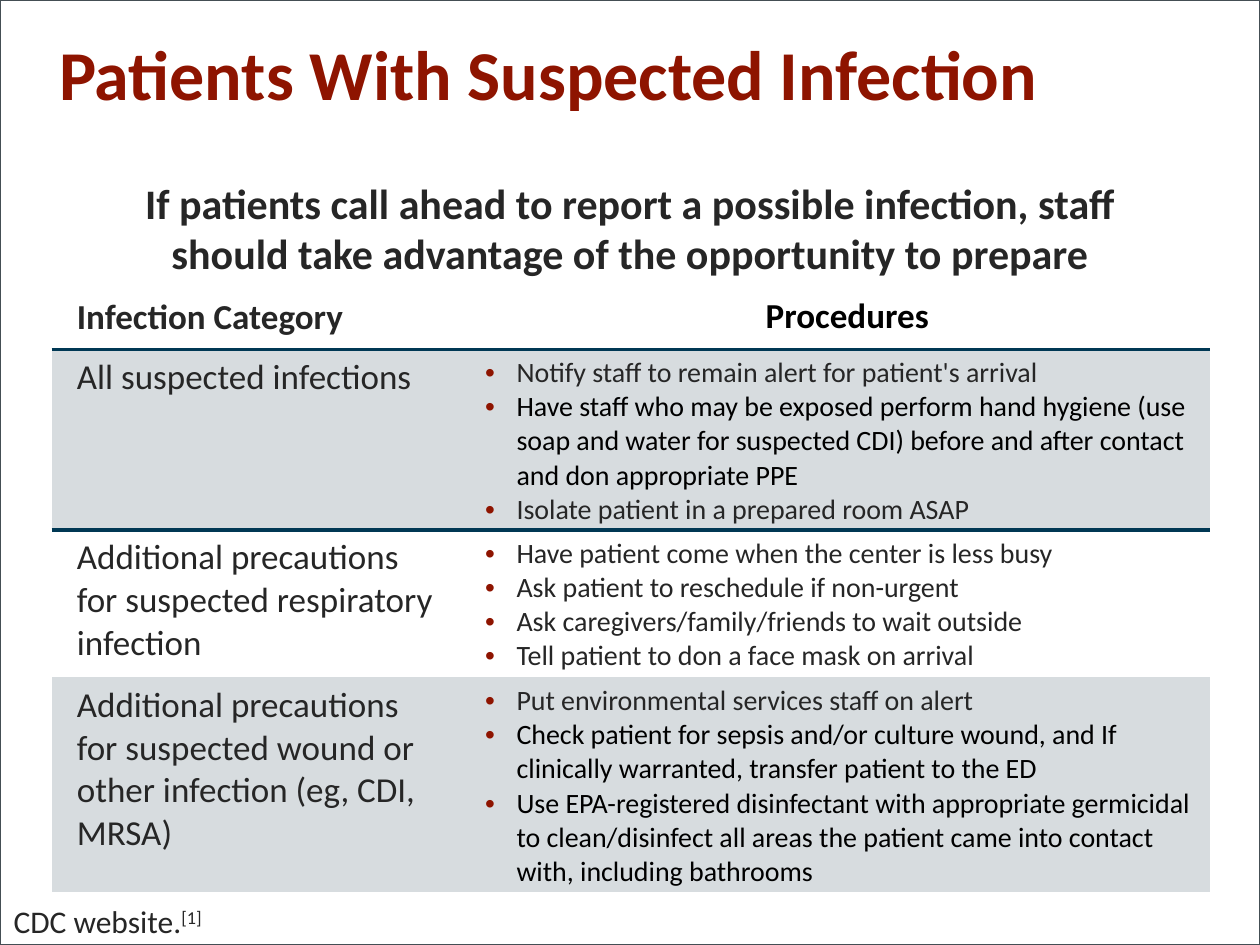
from dataclasses import dataclass

from lxml import etree
from pptx import Presentation
from pptx import util as u
from pptx.dml.color import RGBColor
from pptx.enum import shapes, text
from pptx.oxml import ns

COLUMNS, ROWS = 1000, 750
UNIT = u.Inches(0.01)  # side of one grid square
PLAIN_TABLE = "{2D5ABB26-0587-4C30-8999-92F81FD0307C}"


@dataclass(frozen=True)
class Theme:
    font: str = "Calibri"
    accent: str = "8E1400"
    body: str = "262626"
    strong: str = "000000"
    band: str = "D7DCDF"
    rule: str = "003854"
    frame: str = "444E54"
    title_size: int = 40
    lead_size: int = 24
    category_size: int = 20
    procedure_size: int = 16
    source_size: int = 18


THEME = Theme()

# Category lines, procedures as (wording, colour), row height in grid rows
PRECAUTIONS = [
    (["All suspected infections"],
     [("Notify staff to remain alert for patient's arrival", THEME.body),
      ("Have staff who may be exposed perform hand hygiene (use soap and water "
       "for suspected CDI) before and after contact and don appropriate PPE", THEME.strong),
      ("Isolate patient in a prepared room ASAP", THEME.body)], 143),
    (["Additional precautions", "for suspected respiratory infection"],
     [("Have patient come when the center is less busy", THEME.body),
      ("Ask patient to reschedule if non-urgent", THEME.body),
      ("Ask caregivers/family/friends to wait outside", THEME.body),
      ("Tell patient to don a face mask on arrival", THEME.body)], 117),
    (["Additional precautions", "for suspected wound or other infection (eg, CDI, MRSA)"],
     [("Put environmental services staff on alert", THEME.body),
      ("Check patient for sepsis and/or culture wound, and If clinically warranted, "
       "transfer patient to the ED", THEME.strong),
      ("Use EPA-registered disinfectant with appropriate germicidal to clean/disinfect "
       "all areas the patient came into contact with, including bathrooms", THEME.strong)], 170),
]


def place(box):
    """Turn a box in grid squares into slide lengths."""
    return [side * UNIT for side in box]


def rgb(colour):
    return RGBColor.from_string(colour)


def add_xml(parent, tag, **attributes):
    return etree.SubElement(parent, ns.qn(tag), attributes)


def add_run(paragraph, wording, size, colour=THEME.body, bold=False):
    run = paragraph.add_run()
    run.text = wording
    run.font.size = u.Pt(size)
    run.font.bold = bold
    run.font.color.rgb = rgb(colour)
    run.font.name = THEME.font
    return run


def add_text_area(slide, box, anchor=text.MSO_ANCHOR.TOP):
    """Add a wrapping text box and return its first paragraph."""
    frame = slide.shapes.add_textbox(*place(box)).text_frame
    frame.word_wrap = True
    frame.vertical_anchor = anchor
    return frame.paragraphs[0]


def add_frame(slide, box):
    border = slide.shapes.add_shape(shapes.MSO_SHAPE.RECTANGLE, *place(box))
    border.shadow.inherit = False
    border.fill.background()
    border.line.color.rgb = rgb(THEME.frame)
    border.line.width = u.Pt(1.5)


def add_title(slide, box):
    paragraph = add_text_area(slide, box, text.MSO_ANCHOR.MIDDLE)
    add_run(paragraph, "Patients With Suspected Infection",
            THEME.title_size, THEME.accent, bold=True)


def add_lead(slide, box):
    paragraph = add_text_area(slide, box)
    paragraph.alignment = text.PP_ALIGN.CENTER
    add_run(paragraph, "If patients call ahead to report a possible infection, staff "
            "should take advantage of the opportunity to prepare",
            THEME.lead_size, bold=True)


def add_source(slide, box):
    paragraph = add_text_area(slide, box)
    add_run(paragraph, "CDC website.", THEME.source_size)
    citation = add_run(paragraph, "[1]", THEME.source_size)
    citation.font._element.set("baseline", "30000")


def add_bullet(paragraph):
    properties = paragraph._p.get_or_add_pPr()
    properties.set("marL", str(u.Inches(0.25)))
    properties.set("indent", str(-u.Inches(0.25)))
    add_xml(add_xml(properties, "a:buClr"), "a:srgbClr", val=THEME.accent)
    add_xml(properties, "a:buFont", typeface="Arial")
    add_xml(properties, "a:buChar", char="•")


def add_rule(cell, edge):
    properties = cell._tc.get_or_add_tcPr()
    line = etree.Element(ns.qn(edge), w=str(u.Pt(2.25)))
    add_xml(add_xml(line, "a:solidFill"), "a:srgbClr", val=THEME.rule)
    properties.insert(0, line)


def fill_heading(cell, wording, colour):
    cell.vertical_anchor = text.MSO_ANCHOR.BOTTOM
    cell.margin_left, cell.margin_bottom = u.Inches(0.2), u.Inches(0.1)
    paragraph = cell.text_frame.paragraphs[0]
    add_run(paragraph, wording, THEME.category_size, colour, bold=True)
    add_rule(cell, "a:lnB")
    return paragraph


def fill_category(cell, lines):
    cell.margin_left, cell.margin_bottom = u.Inches(0.2), 0
    paragraph = cell.text_frame.paragraphs[0]
    for number, line in enumerate(lines):
        if number:
            paragraph.add_line_break()
        add_run(paragraph, line, THEME.category_size)


def fill_procedures(cell, procedures):
    cell.vertical_anchor = text.MSO_ANCHOR.MIDDLE
    frame = cell.text_frame
    for number, (wording, colour) in enumerate(procedures):
        paragraph = frame.add_paragraph() if number else frame.paragraphs[0]
        add_bullet(paragraph)
        add_run(paragraph, wording, THEME.procedure_size, colour)


def add_precautions(slide, box):
    table = slide.shapes.add_table(len(PRECAUTIONS) + 1, 2, *place(box)).table
    table._tbl.tblPr.find(ns.qn("a:tableStyleId")).text = PLAIN_TABLE
    table.horz_banding = False
    category_width = 334
    table.columns[0].width = category_width * UNIT
    table.columns[1].width = (box[2] - category_width) * UNIT
    table.rows[0].height = (box[3] - sum(row[2] for row in PRECAUTIONS)) * UNIT

    fill_heading(table.cell(0, 0), "Infection Category", THEME.body).line_spacing = 0.9
    procedures_heading = fill_heading(table.cell(0, 1), "Procedures", THEME.strong)
    procedures_heading.alignment = text.PP_ALIGN.CENTER

    for number, (category, procedures, height) in enumerate(PRECAUTIONS, 1):
        table.rows[number].height = height * UNIT
        fill_category(table.cell(number, 0), category)
        fill_procedures(table.cell(number, 1), procedures)

    for number, row in enumerate(table.rows):
        for cell in row.cells:
            if number % 2:
                cell.fill.solid()
                cell.fill.fore_color.rgb = rgb(THEME.band)
            else:
                cell.fill.background()
            if number == 1:
                add_rule(cell, "a:lnT")


def main():
    deck = Presentation()
    deck.slide_width, deck.slide_height = COLUMNS * UNIT, ROWS * UNIT
    slide = deck.slides.add_slide(deck.slide_layouts[6])
    add_frame(slide, (0, 0, COLUMNS, ROWS))
    add_title(slide, (37, 19, 918, 77))
    add_lead(slide, (89, 136, 822, 91))
    add_precautions(slide, (41, 229, 919, 478))
    add_source(slide, (1, 711, 943, 40))
    deck.save("out.pptx")


if __name__ == "__main__":
    main()
